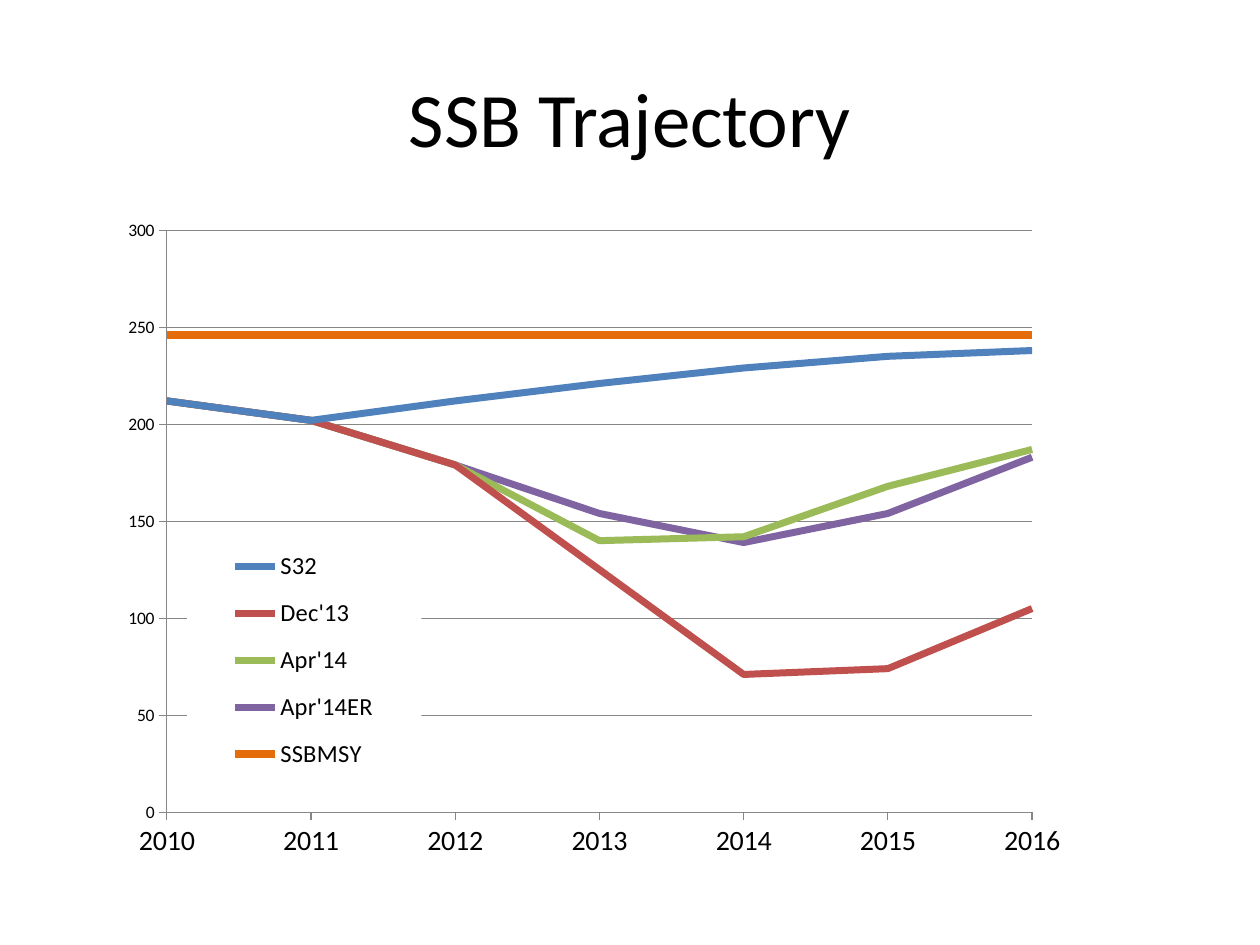
"""Build the SSB Trajectory slide with a scatter chart of five stock series."""
from typing import NamedTuple

from lxml.etree import _Element
from pptx import Presentation
from pptx.chart.chart import Chart
from pptx.chart.data import XyChartData
from pptx.dml.color import RGBColor
from pptx.enum.chart import XL_CHART_TYPE, XL_LEGEND_POSITION, XL_TICK_MARK
from pptx.enum.text import MSO_ANCHOR, PP_ALIGN
from pptx.oxml import parse_xml
from pptx.oxml.ns import nsdecls, qn
from pptx.util import Inches, Pt

COLORS = {
    "text": "000000",
    "grid": "868686",
    "legend": "FFFFFF",
    "blue": "4F81BD",
    "red": "C0504D",
    "green": "9BBB59",
    "purple": "8064A2",
    "orange": "E46C0A",
}
FONT = "Calibri"
YEARS = range(2010, 2017)


class Trajectory(NamedTuple):
    name: str
    color: str
    values: tuple[int, ...]
    width: float = 4


class Area(NamedTuple):
    x: float
    y: float
    w: float
    h: float


TRAJECTORIES = [
    Trajectory("S32", "blue", (212, 202, 212, 221, 229, 235, 238)),
    Trajectory("Dec'13", "red", (212, 202, 179, 125, 71, 74, 105)),
    Trajectory("Apr'14", "green", (212, 202, 179, 140, 142, 168, 187)),
    Trajectory("Apr'14ER", "purple", (212, 202, 179, 154, 139, 154, 183)),
    Trajectory("SSBMSY", "orange", (246,) * len(YEARS), 4.75),
]
PLOT_AREA = Area(0.05, 0.03, 0.85, 0.88)
LEGEND_AREA = Area(0.07, 0.49, 0.23, 0.38)


def rgb(name: str) -> RGBColor:
    """Return a named colour."""
    return RGBColor.from_string(COLORS[name])


def set_layout(element: _Element, index: int, area: Area, inner: bool = False) -> None:
    """Place a chart part by fractions of the chart's size."""
    for old in element.findall(qn("c:layout")):
        element.remove(old)
    target = '<c:layoutTarget val="inner"/>' if inner else ""
    modes = "".join(f'<c:{side}Mode val="edge"/>' for side in "xy")
    sizes = "".join(f'<c:{key} val="{value}"/>' for key, value in area._asdict().items())
    element.insert(index, parse_xml(
        f'<c:layout {nsdecls("c")}><c:manualLayout>{target}{modes}{sizes}'
        "</c:manualLayout></c:layout>"))


def style_axes(chart: Chart) -> None:
    """Set scales, ticks, gridlines and label sizes."""
    axes = [(chart.category_axis, YEARS[0], YEARS[-1], 1, 16),
            (chart.value_axis, 0, 300, 50, 10)]
    for axis, low, high, step, size in axes:
        axis.minimum_scale, axis.maximum_scale, axis.major_unit = low, high, step
        axis.major_tick_mark = XL_TICK_MARK.OUTSIDE
        axis.minor_tick_mark = XL_TICK_MARK.NONE
        axis.has_title = False
        axis.tick_labels.font.size = Pt(size)
        axis.tick_labels.number_format = "General"
        axis.tick_labels.number_format_is_linked = False
        axis.format.line.color.rgb = rgb("grid")
        axis.format.line.width = Pt(0.75)
    chart.category_axis.has_major_gridlines = False
    chart.value_axis.has_major_gridlines = True
    grid = chart.value_axis.major_gridlines.format.line
    grid.color.rgb = rgb("grid")
    grid.width = Pt(0.75)


def style_legend(chart: Chart) -> None:
    """Put a white legend over the lower left of the plot."""
    chart.has_legend = True
    legend = chart.legend
    legend.position = XL_LEGEND_POSITION.RIGHT
    legend.include_in_layout = True
    legend.font.size = Pt(14)
    element = legend._element
    set_layout(element, 1, LEGEND_AREA)
    element.find(qn("c:overlay")).addnext(parse_xml(
        f'<c:spPr {nsdecls("c", "a")}><a:solidFill><a:srgbClr val="{COLORS["legend"]}"/>'
        "</a:solidFill></c:spPr>"))


def main() -> None:
    """Build and save the deck."""
    deck = Presentation()
    deck.slide_width, deck.slide_height = Inches(10), Inches(7.5)
    page = deck.slides.add_slide(deck.slide_layouts[5])

    title = page.shapes.title
    title.left, title.top = Inches(0.5), Inches(0.3)
    title.width, title.height = Inches(9), Inches(1.25)
    title.text_frame.text = "SSB Trajectory"
    title.text_frame.vertical_anchor = MSO_ANCHOR.MIDDLE
    para = title.text_frame.paragraphs[0]
    para.alignment = PP_ALIGN.CENTER
    para.font.name, para.font.size = FONT, Pt(44)
    para.font.color.rgb = rgb("text")

    data = XyChartData()
    for trajectory in TRAJECTORIES:
        points = data.add_series(trajectory.name)
        for year, value in zip(YEARS, trajectory.values):
            points.add_data_point(year, value)
    chart = page.shapes.add_chart(
        XL_CHART_TYPE.XY_SCATTER_LINES_NO_MARKERS,
        Inches(0.92), Inches(1.67), Inches(8.08), Inches(5.25), data).chart
    chart.has_title = False
    chart.font.name, chart.font.size = FONT, Pt(10)
    chart.font.color.rgb = rgb("text")
    plot = chart.plots[0]
    plot.vary_by_categories = False
    for series, trajectory in zip(plot.series, TRAJECTORIES):
        series.smooth = False
        series.format.line.color.rgb = rgb(trajectory.color)
        series.format.line.width = Pt(trajectory.width)
    style_axes(chart)
    style_legend(chart)
    set_layout(chart._chartSpace.chart.plotArea, 0, PLOT_AREA, inner=True)

    deck.save("out.pptx")


if __name__ == "__main__":
    main()
